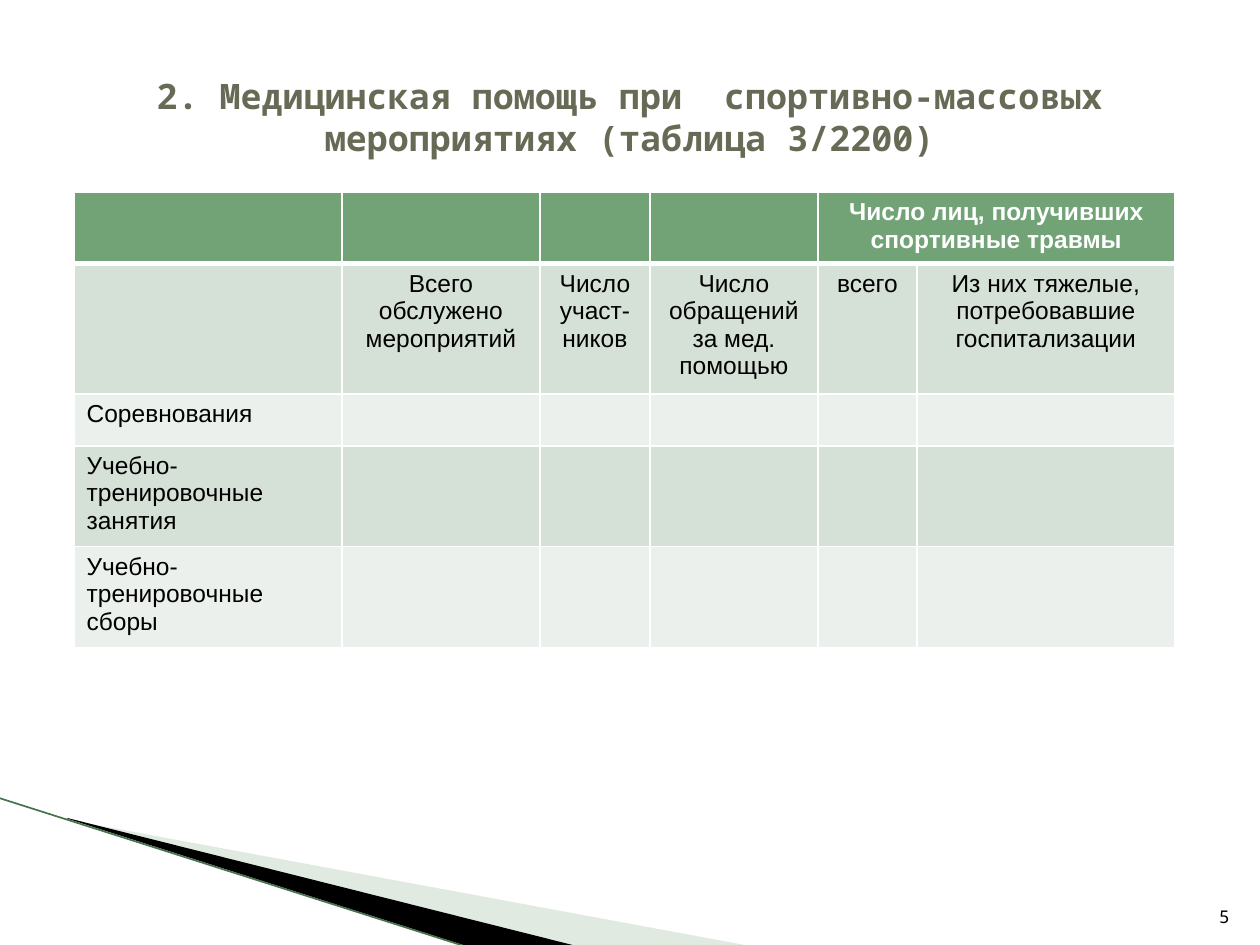
from dataclasses import dataclass
from typing import NamedTuple

from pptx import Presentation
from pptx.dml.color import RGBColor
from pptx.enum.shapes import MSO_CONNECTOR as Connector
from pptx.enum.text import MSO_ANCHOR as Anchor, PP_ALIGN as Align
from pptx.oxml.ns import qn
from pptx.oxml.xmlchemy import OxmlElement
from pptx.util import Pt

PX = 914400 // 126


@dataclass(frozen=True)
class Theme:
    title: str = "676A55"
    ink: str = "000000"
    paper: str = "FFFFFF"
    header: str = "72A376"
    band_dark: str = "D5E0D6"
    band_light: str = "EBF0EC"
    wedge: str = "B3CBB5"
    edge: str = "47724D"
    mono: str = "Noto Sans Mono"
    sans: str = "Arial"
    title_size: int = 20
    table_size: int = 14
    number_size: int = 10


THEME = Theme()


class Box(NamedTuple):
    left: int
    top: int
    width: int
    height: int


class Wedge(NamedTuple):
    box: Box
    points: tuple
    color: str
    opacity: int


class Row(NamedTuple):
    texts: tuple
    fill: str
    color: str = THEME.ink
    bold: bool = False
    bottom_border: int = 1


WEDGES = (
    Wedge(Box(98, 689, 524, 199),
          ((69, 820), (750, 946), (575, 946), (69, 819)), THEME.wedge, 40),
    Wedge(Box(-8, 798, 524, 116),
          ((67, 818), (576, 946), (469, 947), (68, 819)), THEME.ink, 100),
)
TITLE_BOX = Box(63, 38, 1134, 158)
NUMBER_BOX = Box(1192, 883, 50, 50)
TABLE_LEFT, TABLE_TOP = 74, 192
COLUMN_WIDTHS = (268, 198, 110, 168, 99, 258)
ROW_HEIGHT = 52
ROWS = (
    Row(("", "", "", "", "Число лиц, получивших спортивные травмы", ""),
        THEME.header, THEME.paper, True, 3),
    Row(("", "Всего обслужено мероприятий", "Число участ-ников",
         "Число обращений за мед. помощью", "всего",
         "Из них тяжелые, потребовавшие госпитализации"), THEME.band_dark),
    Row(("Соревнования",), THEME.band_light),
    Row(("Учебно-тренировочные занятия",), THEME.band_dark),
    Row(("Учебно-тренировочные сборы",), THEME.band_light),
)


def rgb(color: str) -> RGBColor:
    return RGBColor.from_string(color)


def set_attributes(target, values: dict) -> None:
    for name, value in values.items():
        setattr(target, name, value)


def place(shape, box: Box) -> None:
    set_attributes(shape, {k: v * PX for k, v in box._asdict().items()})


def write(frame, text: str, align, font: str, size: int, color: str,
          bold: bool = False) -> None:
    paragraph = frame.paragraphs[0]
    paragraph.alignment = align
    run = paragraph.add_run()
    run.text = text
    set_attributes(run.font, {"name": font, "size": Pt(size), "bold": bold})
    run.font.color.rgb = rgb(color)


def set_outline_box(shape, wedge: Wedge) -> None:
    outline = shape._element.spPr.find(".//" + qn("a:path"))
    outline.set("w", str(wedge.box.width))
    outline.set("h", str(wedge.box.height))
    for node, (x, y) in zip(outline.iter(qn("a:pt")), wedge.points):
        node.set("x", str(x - wedge.box.left))
        node.set("y", str(y - wedge.box.top))
    place(shape, wedge.box)


def add_wedge(slide, wedge: Wedge) -> None:
    builder = slide.shapes.build_freeform(*wedge.points[0], scale=PX)
    builder.add_line_segments(wedge.points[1:], close=True)
    shape = builder.convert_to_shape()
    set_outline_box(shape, wedge)
    shape.shadow.inherit = False
    shape.fill.solid()
    shape.fill.fore_color.rgb = rgb(wedge.color)
    shape.line.fill.background()
    if wedge.opacity < 100:
        alpha = OxmlElement("a:alpha")
        alpha.set("val", str(wedge.opacity * 1000))
        shape._element.spPr.find(".//" + qn("a:srgbClr")).append(alpha)


def add_edge(slide) -> None:
    line = slide.shapes.add_connector(
        Connector.STRAIGHT, -PX, 798 * PX, 467 * PX, 947 * PX)
    line.line.color.rgb = rgb(THEME.edge)
    line.line.width = Pt(0.95)
    line._element.spPr.append(OxmlElement("a:effectLst"))


def add_title(slide) -> None:
    title = slide.shapes.title
    place(title, TITLE_BOX)
    set_attributes(title.text_frame, {
        "vertical_anchor": Anchor.MIDDLE, "word_wrap": True})
    write(title.text_frame,
          "2. Медицинская помощь при  спортивно-массовых мероприятиях (таблица 3/2200)",
          Align.CENTER, THEME.mono, THEME.title_size, THEME.title, True)


def add_number(slide) -> None:
    box = slide.shapes.add_textbox(0, 0, 0, 0)
    place(box, NUMBER_BOX)
    set_attributes(box.text_frame, {
        "vertical_anchor": Anchor.BOTTOM, "word_wrap": True})
    write(box.text_frame, "5", Align.RIGHT, THEME.mono,
          THEME.number_size, THEME.ink)


def set_borders(cell, bottom: int) -> None:
    properties = cell._tc.get_or_add_tcPr()
    widths = {"a:lnL": 1, "a:lnR": 1, "a:lnT": 1, "a:lnB": bottom}
    for index, (tag, width) in enumerate(widths.items()):
        border = OxmlElement(tag)
        border.set("w", str(Pt(width)))
        fill = OxmlElement("a:solidFill")
        color = OxmlElement("a:srgbClr")
        color.set("val", THEME.paper)
        fill.append(color)
        border.append(fill)
        properties.insert(index, border)


def add_table(slide) -> None:
    box = Box(TABLE_LEFT, TABLE_TOP, sum(COLUMN_WIDTHS), ROW_HEIGHT * len(ROWS))
    table = slide.shapes.add_table(
        len(ROWS), len(COLUMN_WIDTHS), *(value * PX for value in box)).table
    for column, width in zip(table.columns, COLUMN_WIDTHS):
        column.width = width * PX
    for table_row, row in zip(table.rows, ROWS):
        for index, cell in enumerate(table_row.cells):
            cell.fill.solid()
            cell.fill.fore_color.rgb = rgb(row.fill)
            set_borders(cell, row.bottom_border)
            text = row.texts[index] if index < len(row.texts) else ""
            if text:
                write(cell.text_frame, text,
                      Align.CENTER if index else Align.LEFT,
                      THEME.sans, THEME.table_size, row.color, row.bold)
    table.cell(0, 4).merge(table.cell(0, 5))


def main() -> None:
    presentation = Presentation()
    set_attributes(presentation, {
        "slide_width": 1260 * PX, "slide_height": 945 * PX})
    slide = presentation.slides.add_slide(presentation.slide_layouts[5])
    for wedge in WEDGES:
        add_wedge(slide, wedge)
    add_edge(slide)
    add_title(slide)
    add_number(slide)
    add_table(slide)
    presentation.save("out.pptx")


if __name__ == "__main__":
    main()
